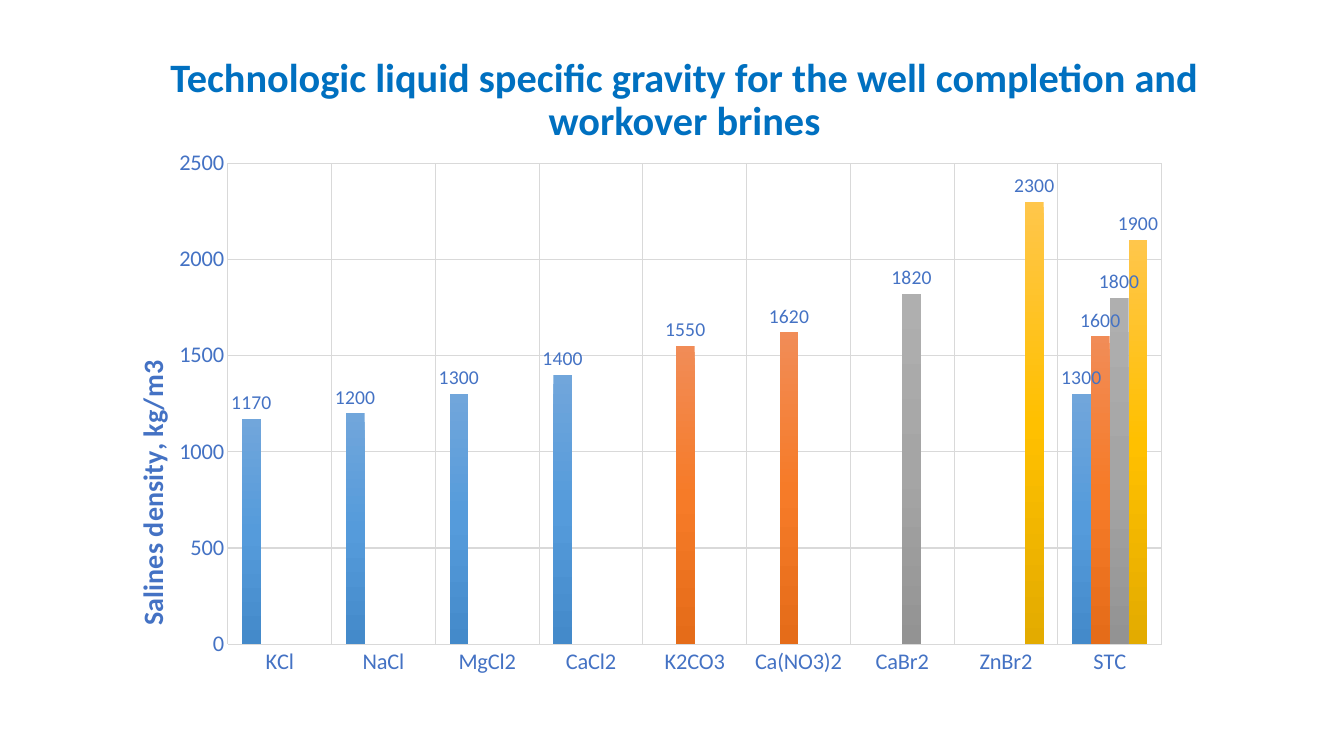
from lxml import etree
from pptx import Presentation
from pptx.chart.data import CategoryChartData
from pptx.dml.color import RGBColor
from pptx.enum.chart import XL_CHART_TYPE, XL_LABEL_POSITION, XL_TICK_MARK
from pptx.enum.text import MSO_ANCHOR, MSO_AUTO_SIZE, PP_ALIGN
from pptx.oxml import parse_xml
from pptx.oxml.ns import nsdecls, qn
from pptx.util import Inches, Pt

COLUMNS = XL_CHART_TYPE.COLUMN_CLUSTERED
OUTSIDE_END = XL_LABEL_POSITION.OUTSIDE_END
NO_TICK = XL_TICK_MARK.NONE
MIDDLE = MSO_ANCHOR.MIDDLE
NO_AUTOFIT = MSO_AUTO_SIZE.NONE
CENTER = PP_ALIGN.CENTER

BLUE = "4472C4"
GRID = "D9D9D9"
SALTS = ["KCl", "NaCl", "MgCl2", "CaCl2", "K2CO3", "Ca(NO3)2", "CaBr2", "ZnBr2", "STC"]
DENSITIES = [
    ("Series 1", {"KCl": 1170, "NaCl": 1200, "MgCl2": 1300, "CaCl2": 1400, "STC": 1300},
     ["71A6DB", "559BDB", "448ACA"]),
    ("Series 2", {"K2CO3": 1550, "Ca(NO3)2": 1620, "STC": 1600}, ["F18C57", "F67B28", "E56C19"]),
    ("Series 3", {"CaBr2": 1820, "STC": 1800}, ["AFAFAF", "A5A5A5", "939393"]),
    ("Series 4", {"ZnBr2": 2300, "STC": 2100}, ["FFC64B", "FFC000", "E3AB00"]),
]


def style_font(font, size, color, bold=False):
    for name, value in {"name": "Calibri", "size": Pt(size), "bold": bold}.items():
        setattr(font, name, value)
    font.color.rgb = RGBColor.from_string(color)


def manual_layout(**values):
    layout = etree.Element(qn("c:layout"))
    manual = etree.SubElement(layout, qn("c:manualLayout"))
    for tag, value in values.items():
        etree.SubElement(manual, qn(f"c:{tag}")).set("val", str(value))
    return layout


prs = Presentation()
prs.slide_width = Inches(13.33)
prs.slide_height = Inches(7.5)
slide = prs.slides.add_slide(prs.slide_layouts[5])

heading = slide.shapes.title
heading_box = {"left": 1.17, "top": 0.64, "width": 11.24, "height": 0.72}
for name, value in heading_box.items():
    setattr(heading, name, Inches(value))
heading_frame = heading.text_frame
heading_frame.text = "Technologic liquid specific gravity for the well completion and workover brines"
heading_format = {"word_wrap": True, "auto_size": NO_AUTOFIT, "vertical_anchor": MIDDLE}
for name, value in heading_format.items():
    setattr(heading_frame, name, value)
heading_line = heading_frame.paragraphs[0]
heading_line.alignment = CENTER
heading_line.line_spacing = 0.9
style_font(heading_line.runs[0].font, 28.8, "0070C0", True)

density_data = CategoryChartData()
density_data.categories = SALTS
for name, values, gradient in DENSITIES:
    density_data.add_series(name, [values.get(salt) for salt in SALTS])
chart = slide.shapes.add_chart(
    COLUMNS, Inches(1.05), Inches(1.48), Inches(10.62), Inches(6.02), density_data
).chart
chart.has_title = False
chart.has_legend = False
style_font(chart.font, 16, "000000")

columns = chart.plots[0]
for name, value in {"gap_width": 150, "overlap": 0, "vary_by_categories": False}.items():
    setattr(columns, name, value)

salt_axis, density_axis = chart.category_axis, chart.value_axis
axis_format = {"major_tick_mark": NO_TICK, "minor_tick_mark": NO_TICK, "has_major_gridlines": True}
for axis in (salt_axis, density_axis):
    for name, value in axis_format.items():
        setattr(axis, name, value)
    style_font(axis.tick_labels.font, 16, BLUE)
    grid_line = axis.major_gridlines.format.line
    grid_line.color.rgb = RGBColor.from_string(GRID)
    grid_line.width = Pt(0.75)
salt_axis.format.line.color.rgb = RGBColor.from_string(GRID)
salt_axis.format.line.width = Pt(1)
density_axis.format.line.fill.background()
for name, value in {"minimum_scale": 0, "maximum_scale": 2500, "major_unit": 500}.items():
    setattr(density_axis, name, value)

density_title = density_axis.axis_title
density_title.text_frame.text = "Salines density, kg/m3"
style_font(density_title.text_frame.paragraphs[0].runs[0].font, 20, BLUE, True)
title_body = density_title.text_frame._txBody.find(qn("a:bodyPr"))
title_body.set("rot", "-5400000")
title_body.set("vert", "horz")
title_xml = density_title._element
for layout in title_xml.findall(qn("c:layout")):
    title_xml.remove(layout)
title_xml.find(qn("c:tx")).addnext(manual_layout(xMode="edge", yMode="edge", x=0.02, y=0.34))

plot_area = chart._chartSpace.chart.plotArea
for layout in plot_area.findall(qn("c:layout")):
    plot_area.remove(layout)
plot_area.insert(0, manual_layout(
    layoutTarget="inner", xMode="edge", yMode="edge", x=0.114, y=0.023, w=0.872, h=0.793
))

for series, (name, values, gradient) in zip(columns.series, DENSITIES):
    series.format.fill.gradient()
    series.format.fill.gradient_angle = 270
    stops = series._element.spPr.find(qn("a:gradFill")).find(qn("a:gsLst"))
    for stop in list(stops):
        stops.remove(stop)
    for position, color in zip((0, 50000, 100000), gradient):
        stops.append(parse_xml(
            f'<a:gs {nsdecls("a")} pos="{position}"><a:srgbClr val="{color}"/></a:gs>'
        ))
    labels = series.data_labels
    labels.show_value = True
    labels.position = OUTSIDE_END
    style_font(labels.font, 14, BLUE)

stc_label = columns.series[3].points[SALTS.index("STC")].data_label
stc_label.text_frame.text = "1900"
stc_label.position = OUTSIDE_END
style_font(stc_label.text_frame.paragraphs[0].runs[0].font, 14, BLUE)

prs.save("out.pptx")
